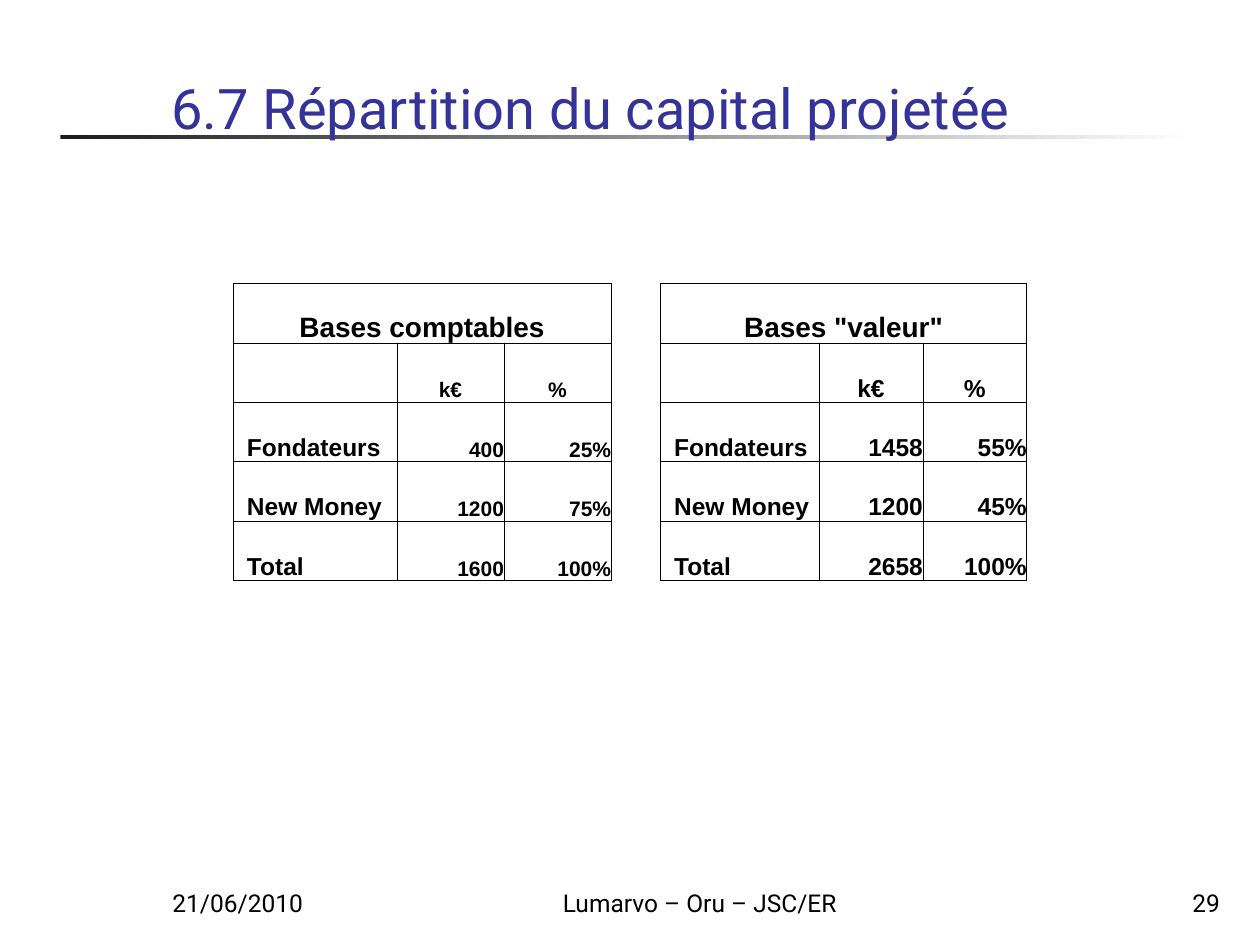
from lxml import etree
from pptx import Presentation
from pptx import util as u
from pptx.dml.color import RGBColor
from pptx.enum import shapes, text
from pptx.oxml.ns import qn

HUES = {"ink": "000000", "title": "333399", "dark": "1C1C1C", "pale": "FFFFFF"}
COLS, ROWS = 100, 75
LEFT, MID, RIGHT = text.PP_ALIGN.LEFT, text.PP_ALIGN.CENTER, text.PP_ALIGN.RIGHT


class Deck:
    """Places elements on a grid of COLS by ROWS cells."""

    def __init__(self):
        self.prs = Presentation()
        self.prs.slide_width, self.prs.slide_height = u.Inches(10), u.Inches(7.5)
        self.slide = self.prs.slides.add_slide(self.prs.slide_layouts[6])

    def wide(self, cols):
        return round(self.prs.slide_width * cols / COLS)

    def high(self, rows):
        return round(self.prs.slide_height * rows / ROWS)

    def box(self, x, y, w, h):
        return self.wide(x), self.high(y), self.wide(w), self.high(h)

    def style(self, frame, words, size, align=LEFT, font="Roboto", hue="ink", bold=False):
        frame.text = words
        para = frame.paragraphs[0]
        para.alignment = align
        for run in para.runs:
            run.font.name, run.font.size, run.font.bold = font, u.Pt(size), bold
            run.font.color.rgb = RGBColor.from_string(HUES[hue])

    def label(self, place, words, size, align=LEFT, hue="ink"):
        frame = self.slide.shapes.add_textbox(*self.box(*place)).text_frame
        frame.word_wrap = True
        frame.vertical_anchor = text.MSO_ANCHOR.BOTTOM
        self.style(frame, words, size, align, hue=hue)

    def rule(self, place):
        """Draw a bar that fades from dark to pale."""
        bar = self.slide.shapes.add_shape(shapes.MSO_SHAPE.RECTANGLE, *self.box(*place))
        bar.shadow.inherit = False
        bar.line.fill.background()
        bar.fill.gradient()
        bar.fill.gradient_angle = 0
        for stop, hue in zip(bar.fill.gradient_stops, ("dark", "pale")):
            stop.color.rgb = RGBColor.from_string(HUES[hue])

    def edge(self, cell):
        """Put a thin line on all four sides of a cell."""
        props = cell._tc.get_or_add_tcPr()
        for i, side in enumerate(("lnL", "lnR", "lnT", "lnB")):
            line = etree.Element(qn(f"a:{side}"), w=str(u.Pt(0.5)))
            fill = etree.SubElement(line, qn("a:solidFill"))
            etree.SubElement(fill, qn("a:srgbClr"), val=HUES["ink"])
            props.insert(i, line)

    def table(self, x, y, widths, row, title, data, size):
        """Draw a titled table; size is that of the figures and their heads."""
        count = len(data) + 1
        place = self.box(x, y, sum(widths), row * count)
        grid = self.slide.shapes.add_table(count, len(widths), *place).table
        grid.first_row = grid.horz_banding = False
        for col, width in zip(grid.columns, widths):
            col.width = self.wide(width)
        for line in grid.rows:
            line.height = self.high(row)
        for r, words in enumerate([(title, "", "")] + data):
            for c, word in enumerate(words):
                cell = grid.cell(r, c)
                cell.fill.background()
                cell.vertical_anchor = text.MSO_ANCHOR.BOTTOM
                cell.margin_left = cell.margin_right = 0
                cell.margin_top = cell.margin_bottom = 0
                self.edge(cell)
                if r > 1 and c == 0:
                    cell.margin_left = self.wide(1.1)
                if word:
                    align = MID if r < 2 else RIGHT if c else LEFT
                    points = 16 if r == 0 else size if c else 14
                    self.style(cell.text_frame, word, points, align, "Arial", bold=True)
        grid.cell(0, 0).merge(grid.cell(0, len(widths) - 1))


def main():
    deck = Deck()
    deck.rule((4.8, 10.7, 90, 0.3))
    for x, w, words, align in (
        (12.7, 20.8, "21/06/2010", LEFT),
        (39.7, 31.7, "Lumarvo – Oru – JSC/ER", MID),
        (77, 20.8, "29", RIGHT),
    ):
        deck.label((x, 68.3, w, 5), words, 14, align)
    deck.label((12.6, 2.3, 85.2, 9.4), "6.7 Répartition du capital projetée", 32, hue="title")

    heads = ("", "k€", "%")
    books = [
        heads,
        ("Fondateurs", "400", "25%"),
        ("New Money", "1200", "75%"),
        ("Total", "1600", "100%"),
    ]
    worth = [
        heads,
        ("Fondateurs", "1458", "55%"),
        ("New Money", "1200", "45%"),
        ("Total", "2658", "100%"),
    ]
    deck.table(18.5, 22.5, (13, 8.5, 8.5), 4.72, "Bases comptables", books, 12)
    deck.table(52.4, 22.5, (12.6, 8.25, 8.25), 4.72, 'Bases "valeur"', worth, 14)
    deck.prs.save("out.pptx")


if __name__ == "__main__":
    main()
